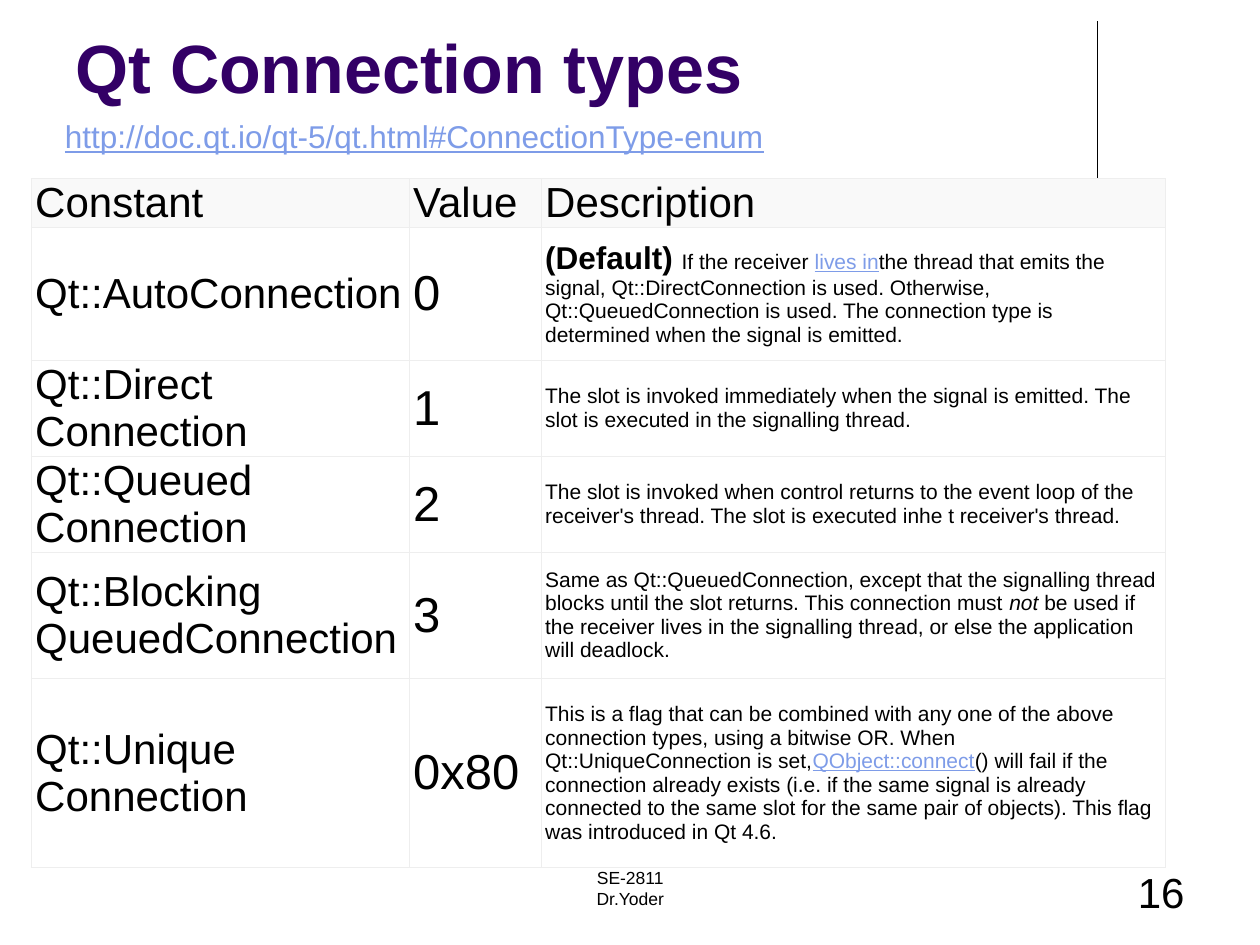
import pptx
import pptx.dml.color
import pptx.enum.shapes
import pptx.enum.text
import pptx.oxml.ns
import pptx.util
from dataclasses import dataclass
from lxml import etree

Cm, Pt = pptx.util.Cm, pptx.util.Pt
ALIGN = pptx.enum.text.PP_ALIGN
ANCHOR = pptx.enum.text.MSO_ANCHOR
qn = pptx.oxml.ns.qn


@dataclass(frozen=True)
class Theme:
    font: str = "Arial"
    ink: str = "000000"
    heading: str = "330066"
    link: str = "7E9CE8"
    grid: str = "EEEEEE"
    header_fill: str = "F9F9F9"
    body_fill: str = "FFFFFF"
    title_size: float = 39
    value_size: float = 28
    large_size: float = 24
    large_leading: float = 26.8
    medium_size: float = 18
    detail_size: float = 12
    footer_size: float = 10
    rule_width: float = 0.75
    grid_width: float = 0.6


THEME = Theme()
LINK = {"color": THEME.link, "underline": True}


def rgb(value):
    return pptx.dml.color.RGBColor.from_string(value)


def add_text(paragraph, text, size, color=THEME.ink, bold=False, italic=False,
             underline=False):
    """Append text in one format; newlines become line breaks."""
    for index, line in enumerate(text.split("\n")):
        if index:
            paragraph.add_line_break()
        run = paragraph.add_run()
        run.text = line
        font = run.font
        font.name, font.size, font.color.rgb = THEME.font, Pt(size), rgb(color)
        font.bold, font.italic, font.underline = bold, italic, underline


class SlideBuilder:
    def __init__(self, slide, theme):
        self.slide = slide
        self.theme = theme

    def rule(self, x, top, bottom):
        rule = self.slide.shapes.add_connector(
            pptx.enum.shapes.MSO_CONNECTOR.STRAIGHT, Cm(x), Cm(top), Cm(x), Cm(bottom))
        rule.line.color.rgb = rgb(self.theme.ink)
        rule.line.width = Pt(self.theme.rule_width)
        etree.SubElement(rule.element.spPr, qn("a:effectLst"))

    def text(self, box, lines, align=ALIGN.LEFT, anchor=ANCHOR.TOP, wrap=True,
             bottom_inset=0.13, **style):
        frame = self.slide.shapes.add_textbox(*map(Cm, box)).text_frame
        frame.word_wrap = wrap
        frame.vertical_anchor = anchor
        frame.margin_bottom = Cm(bottom_inset)
        for index, line in enumerate(lines):
            paragraph = frame.add_paragraph() if index else frame.paragraphs[0]
            paragraph.alignment = align
            add_text(paragraph, line, **style)

    def cell(self, cell, parts, fill, anchor, size):
        cell.margin_left = cell.margin_right = Cm(0.08)
        cell.margin_top = cell.margin_bottom = Cm(0.02)
        cell.vertical_anchor = anchor
        properties = cell._tc.get_or_add_tcPr()
        for side in ("a:lnL", "a:lnR", "a:lnT", "a:lnB"):
            border = etree.SubElement(properties, qn(side),
                                      w=str(int(Pt(self.theme.grid_width))))
            solid = etree.SubElement(border, qn("a:solidFill"))
            etree.SubElement(solid, qn("a:srgbClr"), val=self.theme.grid)
        cell.fill.solid()
        cell.fill.fore_color.rgb = rgb(fill)
        paragraph = cell.text_frame.paragraphs[0]
        if size == self.theme.large_size:
            paragraph.line_spacing = Pt(self.theme.large_leading)
        for text, style in parts:
            add_text(paragraph, text, **{"size": size, **style})

    def table(self, left, top, widths, heights, header, rows):
        theme = self.theme
        table = self.slide.shapes.add_table(
            len(heights), len(widths), Cm(left), Cm(top),
            Cm(sum(widths)), Cm(sum(heights))).table
        table.first_row = table.horz_banding = False
        for column, width in zip(table.columns, widths):
            column.width = Cm(width)
        for row, height in zip(table.rows, heights):
            row.height = Cm(height)
        for column, label in enumerate(header):
            self.cell(table.cell(0, column), [(label, {})], theme.header_fill,
                      ANCHOR.TOP, theme.large_size)
        sizes = (theme.large_size, theme.value_size, theme.detail_size)
        for row, (constant, value, description) in enumerate(rows, start=1):
            contents = ([(constant, {})], [(value, {})], description)
            for column, (parts, size) in enumerate(zip(contents, sizes)):
                self.cell(table.cell(row, column), parts, theme.body_fill,
                          ANCHOR.MIDDLE, size)


CONNECTION_TYPES = [
    ("Qt::AutoConnection", "0", [
        ("(Default) ", {"size": THEME.medium_size, "bold": True}),
        ("If the receiver ", {}),
        ("lives in", LINK),
        ("the thread that emits the signal, Qt::DirectConnection is used. Otherwise, "
         "Qt::QueuedConnection is used. The connection type is determined when the "
         "signal is emitted.", {})]),
    ("Qt::Direct\nConnection", "1", [
        ("The slot is invoked immediately when the signal is emitted. The slot is "
         "executed in the signalling thread.", {})]),
    ("Qt::Queued\nConnection", "2", [
        ("The slot is invoked when control returns to the event loop of the receiver's "
         "thread. The slot is executed inhe t receiver's thread.", {})]),
    ("Qt::Blocking\nQueuedConnection", "3", [
        ("Same as Qt::QueuedConnection, except that the signalling thread blocks until "
         "the slot returns. This connection must ", {}),
        ("not", {"italic": True}),
        (" be used if the receiver lives in the signalling thread, or else the "
         "application will deadlock.", {})]),
    ("Qt::Unique\nConnection", "0x80", [
        ("This is a flag that can be combined with any one of the above connection "
         "types, using a bitwise OR. When Qt::UniqueConnection is set,", {}),
        ("QObject::connect", LINK),
        ("() will fail if the connection already exists (i.e. if the same signal is "
         "already connected to the same slot for the same pair of objects). This flag "
         "was introduced in Qt 4.6.", {})]),
]


def main():
    deck = pptx.Presentation()
    deck.slide_width, deck.slide_height = Cm(25.4), Cm(19.05)
    builder = SlideBuilder(deck.slides.add_slide(deck.slide_layouts[6]), THEME)

    # Heading
    builder.rule(22.12, 0.43, 4.65)
    builder.text((1.27, 0.33, 20.96, 3.61), ["Qt Connection types"],
                 anchor=ANCHOR.BOTTOM, bottom_inset=1.78,
                 size=THEME.title_size, color=THEME.heading, bold=True)

    # Connection types
    builder.table(0.63, 3.6, widths=(7.62, 2.66, 12.58),
                  heights=(0.98, 2.68, 1.93, 1.93, 2.55, 3.81),
                  header=("Constant", "Value", "Description"), rows=CONNECTION_TYPES)

    # Footer
    builder.text((8.68, 17.35, 8.05, 1.27), ["SE-2811", "Dr.Yoder"],
                 align=ALIGN.CENTER, size=THEME.footer_size)
    builder.text((18.2, 17.35, 5.93, 1.27), ["16"],
                 align=ALIGN.RIGHT, size=THEME.large_size)

    # Reference address
    builder.text((1.06, 2.24, 14.73, 1.8),
                 ["http://doc.qt.io/qt-5/qt.html#ConnectionType-enum"],
                 wrap=False, size=THEME.medium_size, **LINK)

    deck.save("out.pptx")


if __name__ == "__main__":
    main()
